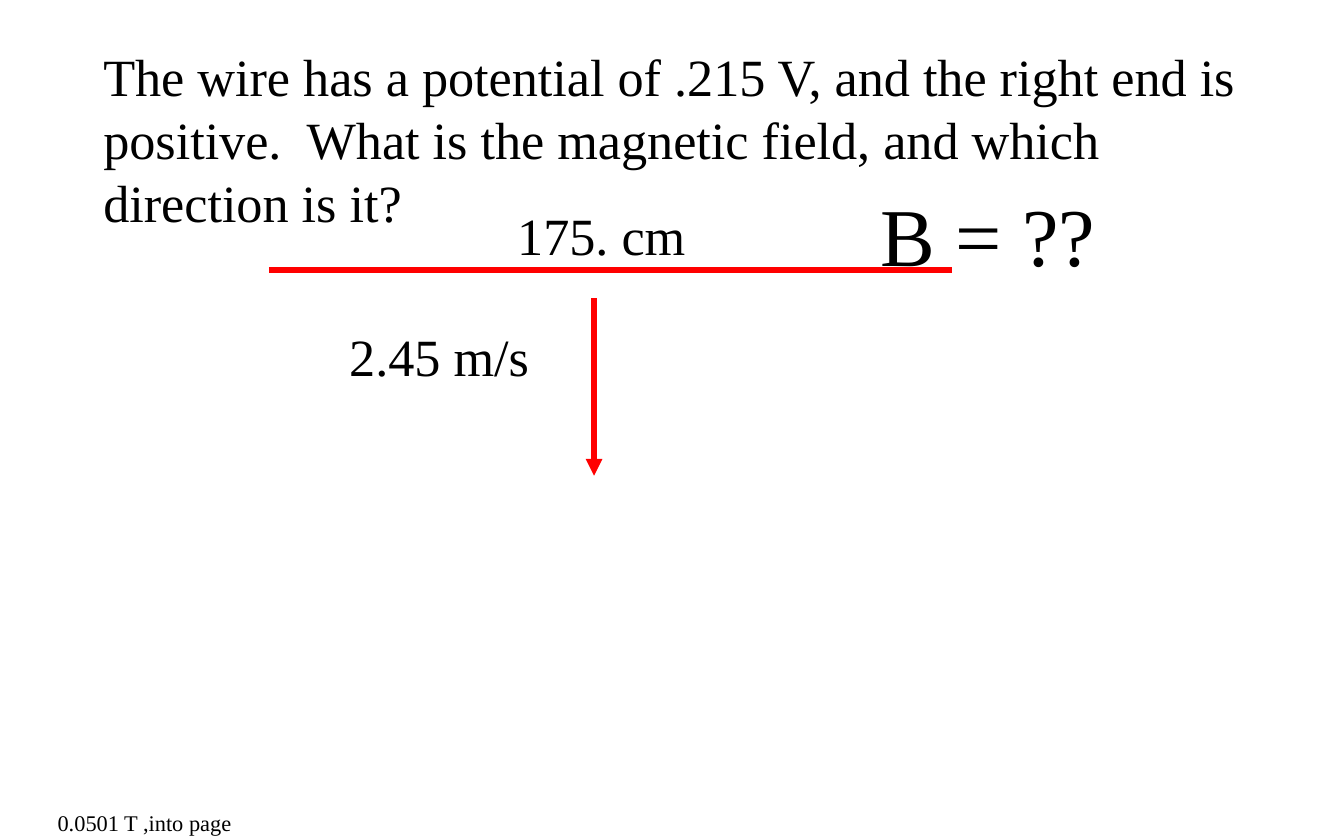
import pptx
import pptx.util
import pptx.dml.color
import pptx.enum.shapes
import pptx.enum.text
import pptx.oxml.ns
import lxml.etree

Inches = pptx.util.Inches
BLACK = pptx.dml.color.RGBColor(0x00, 0x00, 0x00)
RED = pptx.dml.color.RGBColor(0xFF, 0x00, 0x00)
FONT = "Times New Roman"

prs = pptx.Presentation()
prs.slide_width = Inches(10)
prs.slide_height = Inches(6.25)
slide = prs.slides.add_slide(prs.slide_layouts[6])


def add_text(text, left, top, width, height, size, wrap=False):
    box = slide.shapes.add_textbox(
        Inches(left), Inches(top), Inches(width), Inches(height))
    frame = box.text_frame
    frame.word_wrap = wrap
    frame.auto_size = pptx.enum.text.MSO_AUTO_SIZE.SHAPE_TO_FIT_TEXT
    paragraph = frame.paragraphs[0]
    paragraph.text = text
    paragraph.font.name = FONT
    paragraph.font.size = pptx.util.Pt(size)
    paragraph.font.color.rgb = BLACK


def add_red_line(x1, y1, x2, y2):
    line = slide.shapes.add_connector(
        pptx.enum.shapes.MSO_CONNECTOR.STRAIGHT,
        Inches(x1), Inches(y1), Inches(x2), Inches(y2))
    line.line.color.rgb = RED
    line.line.width = pptx.util.Pt(3)
    lxml.etree.SubElement(line._element.spPr, pptx.oxml.ns.qn("a:effectLst"))
    return line


# Question and answer
add_text("The wire has a potential of .215 V, and the right end is positive.  "
         "What is the magnetic field, and which direction is it?",
         0.67, 0.28, 9.08, 1.51, 28, wrap=True)
add_text("0.0501 T ,into page", 0.33, 5.97, 1.51, 0.3, 12)

# Unknown field, wire length and speed
add_text("B = ??", 6.45, 1.32, 1.82, 0.84, 44)
add_text("175. cm", 3.75, 1.46, 1.47, 0.57, 28)
add_text("2.45 m/s", 2.5, 2.36, 1.55, 0.57, 28)

# Wire
add_red_line(2, 2.01, 7.08, 2.01)

# Velocity arrow
velocity = add_red_line(4.42, 2.22, 4.42, 3.54)
lxml.etree.SubElement(velocity.line._get_or_add_ln(),
                      pptx.oxml.ns.qn("a:tailEnd"), type="triangle")

prs.save("out.pptx")
